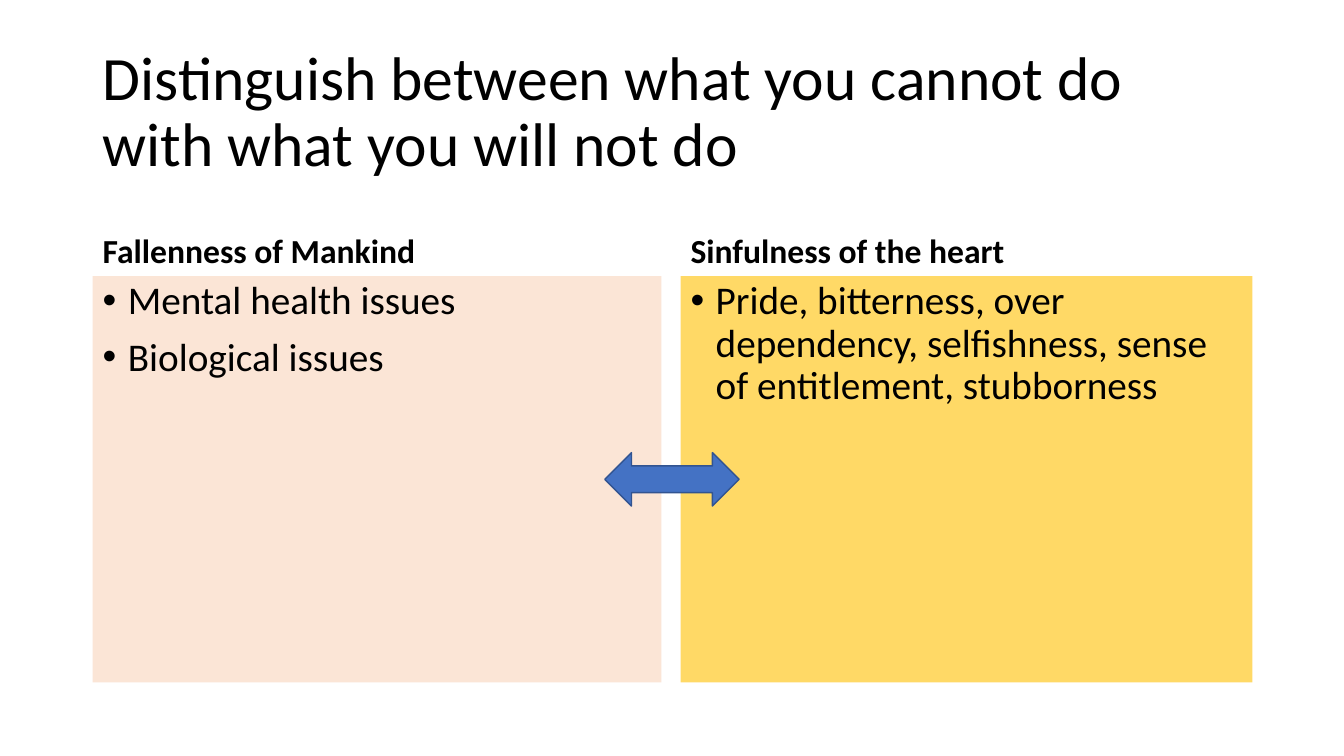
from dataclasses import dataclass

from lxml import etree
from pptx import Presentation
from pptx import util as u
from pptx.dml.color import RGBColor
from pptx.enum import shapes, text
from pptx.oxml.ns import qn

SLIDE_WIDTH, SLIDE_HEIGHT = u.Inches(13.33), u.Inches(7.5)
COLOURS = {
    "ink": "000000",
    "fallenness": "FBE5D6",
    "sinfulness": "FFD966",
    "arrow": "4472C4",
    "arrow edge": "325491",
}
INDENT = u.Inches(0.25)


@dataclass(frozen=True)
class Box:
    """Left, top, width and height in percent of the slide's size."""
    left: float
    top: float
    width: float
    height: float

    def emu(self) -> tuple[int, int, int, int]:
        return (round(SLIDE_WIDTH * self.left / 100),
                round(SLIDE_HEIGHT * self.top / 100),
                round(SLIDE_WIDTH * self.width / 100),
                round(SLIDE_HEIGHT * self.height / 100))


@dataclass(frozen=True)
class Side:
    heading: str
    points: tuple[str, ...]
    left: float
    width: float
    fill: str


MARGIN = 6.9
HEADING_TOP, HEADING_HEIGHT = 24.53, 12
PANEL_TOP, PANEL_HEIGHT = HEADING_TOP + HEADING_HEIGHT, 53.73
TITLE_BOX = Box(MARGIN, 5.33, 86.27, 19.33)
ARROW_BOX = Box(45, 59.87, 10, 7.07)
SIDES = (
    Side("Fallenness of Mankind",
         ("Mental health issues", "Biological issues"),
         MARGIN, 42.31, "fallenness"),
    Side("Sinfulness of the heart",
         ("Pride, bitterness, over dependency, selfishness, sense of "
          "entitlement, stubborness",),
         50.64, 42.54, "sinfulness"),
)


def colour(name: str) -> RGBColor:
    return RGBColor.from_string(COLOURS[name])


def add_bullet(paragraph) -> None:
    properties = paragraph._p.get_or_add_pPr()
    properties.set("marL", str(INDENT))
    properties.set("indent", str(-INDENT))
    etree.SubElement(properties, qn("a:buFont"), typeface="Arial")
    etree.SubElement(properties, qn("a:buChar"), char="•")


def add_text(slide, box: Box, lines: tuple[str, ...], *, size: float,
             bold: bool = False, bullets: bool = False, before: float = 0,
             anchor=text.MSO_ANCHOR.TOP, fill: str | None = None) -> None:
    area = slide.shapes.add_textbox(*box.emu())
    if fill:
        area.fill.solid()
        area.fill.fore_color.rgb = colour(fill)
    frame = area.text_frame
    frame.word_wrap = True
    frame.vertical_anchor = anchor
    for number, line in enumerate(lines):
        paragraph = frame.add_paragraph() if number else frame.paragraphs[0]
        paragraph.line_spacing = 0.9
        paragraph.space_before = u.Pt(before)
        if bullets:
            add_bullet(paragraph)
        run = paragraph.add_run()
        run.text = line
        run.font.name = "Calibri"
        run.font.size = u.Pt(size)
        run.font.bold = bold
        run.font.color.rgb = colour("ink")


def add_side(slide, side: Side) -> None:
    add_text(slide, Box(side.left, HEADING_TOP, side.width, HEADING_HEIGHT),
             (side.heading,), size=24, bold=True, before=10,
             anchor=text.MSO_ANCHOR.BOTTOM)
    add_text(slide, Box(side.left, PANEL_TOP, side.width, PANEL_HEIGHT),
             side.points, size=28, bullets=True, before=10, fill=side.fill)


def add_arrow(slide, box: Box) -> None:
    arrow = slide.shapes.add_shape(
        shapes.MSO_SHAPE.LEFT_RIGHT_ARROW, *box.emu())
    arrow.shadow.inherit = False
    arrow.fill.solid()
    arrow.fill.fore_color.rgb = colour("arrow")
    arrow.line.color.rgb = colour("arrow edge")
    arrow.line.width = u.Pt(1)


def main() -> None:
    deck = Presentation()
    deck.slide_width, deck.slide_height = SLIDE_WIDTH, SLIDE_HEIGHT
    slide = deck.slides.add_slide(deck.slide_layouts[6])
    add_text(slide, TITLE_BOX,
             ("Distinguish between what you cannot do with what you "
              "will not do",),
             size=44, anchor=text.MSO_ANCHOR.MIDDLE)
    for side in SIDES:
        add_side(slide, side)
    add_arrow(slide, ARROW_BOX)
    deck.save("out.pptx")


if __name__ == "__main__":
    main()
